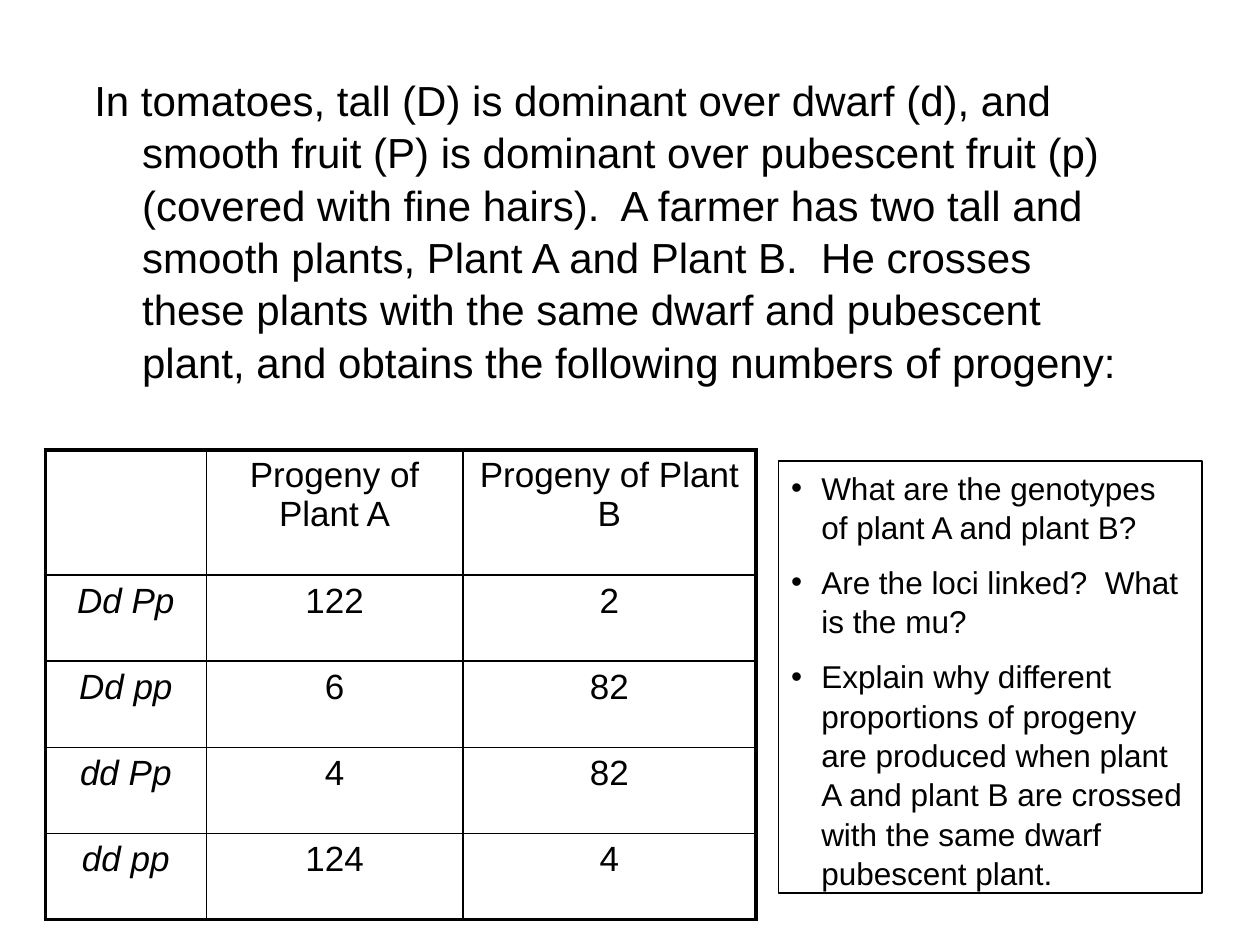
import pptx
import pptx.util
import pptx.dml.color
import pptx.enum.shapes
import pptx.enum.text
import pptx.oxml
import pptx.oxml.ns

Inches, Pt = pptx.util.Inches, pptx.util.Pt
PP_ALIGN = pptx.enum.text.PP_ALIGN
W, H = 10, 7.5
COLORS = {"ink": "000000"}
THIN, THICK = 1, 2.25

PROBLEM = (
    "In tomatoes, tall (D) is dominant over dwarf (d), and smooth fruit (P) is "
    "dominant over pubescent fruit (p) (covered with fine hairs).  A farmer has "
    "two tall and smooth plants, Plant A and Plant B.  He crosses these plants "
    "with the same dwarf and pubescent plant, and obtains the following numbers "
    "of progeny:"
)
PROGENY = [
    ["", "Progeny of Plant A", "Progeny of Plant B"],
    ["Dd Pp", "122", "2"],
    ["Dd pp", "6", "82"],
    ["dd Pp", "4", "82"],
    ["dd pp", "124", "4"],
]
QUESTIONS = [
    "What are the genotypes of plant A and plant B?",
    "Are the loci linked?  What is the mu?",
    "Explain why different proportions of progeny are produced when plant A and "
    "plant B are crossed with the same dwarf pubescent plant.",
]


def rgb(name):
    return pptx.dml.color.RGBColor.from_string(COLORS[name])


def share(left, top, width, height):
    """Turn shares of the slide into lengths."""
    return [Inches(v) for v in (left * W, top * H, width * W, height * H)]


def add_xml(parent, tag, **attrs):
    el = pptx.oxml.ns.qn(tag)
    child = parent.makeelement(el, attrs)
    parent.append(child)
    return child


def write(p, text, size=20, italic=False, align=PP_ALIGN.LEFT, before=0,
          spacing=1.0, hang=0, bullet=None):
    p.alignment, p.space_before, p.line_spacing = align, Pt(before), spacing
    pPr = p._p.get_or_add_pPr()
    if hang:
        pPr.set("marL", str(Inches(hang)))
        pPr.set("indent", str(-Inches(hang)))
    if bullet:
        add_xml(pPr, "a:buFont", typeface="Arial")
        add_xml(pPr, "a:buChar", char=bullet)
    r = p.add_run()
    r.text = text
    r.font.name, r.font.size, r.font.italic = "Arial", Pt(size), italic
    r.font.color.rgb = rgb("ink")


def set_borders(cell, **widths):
    tcPr = cell._tc.get_or_add_tcPr()
    for i, side in enumerate(("lnL", "lnR", "lnT", "lnB")):
        ln = tcPr.makeelement(pptx.oxml.ns.qn("a:" + side),
                              {"w": str(Pt(widths[side]))})
        fill = add_xml(ln, "a:solidFill")
        add_xml(fill, "a:srgbClr", val=COLORS["ink"])
        tcPr.insert(i, ln)


def add_problem(s, box):
    tf = s.shapes.add_textbox(*box).text_frame
    tf.word_wrap = True
    write(tf.paragraphs[0], PROBLEM, size=24, spacing=1.04, hang=0.38)


def add_progeny_table(s, box, col_shares, row_shares):
    left, top, width, height = box
    n_rows, n_cols = len(PROGENY), len(PROGENY[0])
    table = s.shapes.add_table(n_rows, n_cols, *box).table
    table.first_row = table.horz_banding = False
    for col, part in zip(table.columns, col_shares):
        col.width = int(width * part / sum(col_shares))
    for row, part in zip(table.rows, row_shares):
        row.height = int(height * part / sum(row_shares))
    for i, values in enumerate(PROGENY):
        for j, text in enumerate(values):
            cell = table.cell(i, j)
            cell.fill.background()
            # Thick frame outside, thin rules inside
            set_borders(cell,
                        lnL=THICK if j == 0 else THIN,
                        lnR=THICK if j == n_cols - 1 else THIN,
                        lnT=THICK if i == 0 else THIN,
                        lnB=THICK if i == n_rows - 1 else THIN)
            if text:
                write(cell.text_frame.paragraphs[0], text, italic=j == 0,
                      align=PP_ALIGN.CENTER)


def add_questions(s, box):
    sp = s.shapes.add_shape(pptx.enum.shapes.MSO_SHAPE.RECTANGLE, *box)
    sp.shadow.inherit = False
    sp.fill.background()
    sp.line.color.rgb, sp.line.width = rgb("ink"), Pt(0.75)
    tf = sp.text_frame
    tf.word_wrap = True
    tf.vertical_anchor = pptx.enum.text.MSO_ANCHOR.TOP
    for i, text in enumerate(QUESTIONS):
        p = tf.add_paragraph() if i else tf.paragraphs[0]
        write(p, text, size=18, before=9 if i else 0, spacing=1.04,
              hang=0.24, bullet="•")


def main():
    prs = pptx.Presentation()
    prs.slide_width, prs.slide_height = Inches(W), Inches(H)
    s = prs.slides.add_slide(prs.slide_layouts[6])
    # Problem statement
    add_problem(s, share(0.065, 0.07, 0.85, 0.36))
    # Cross results
    add_progeny_table(s, share(0.036, 0.476, 0.564, 0.497),
                      (1.28, 2.04, 2.33), (0.99, 0.68, 0.68, 0.68, 0.68))
    # Questions
    add_questions(s, share(0.618, 0.488, 0.336, 0.457))
    prs.save("out.pptx")


if __name__ == "__main__":
    main()
